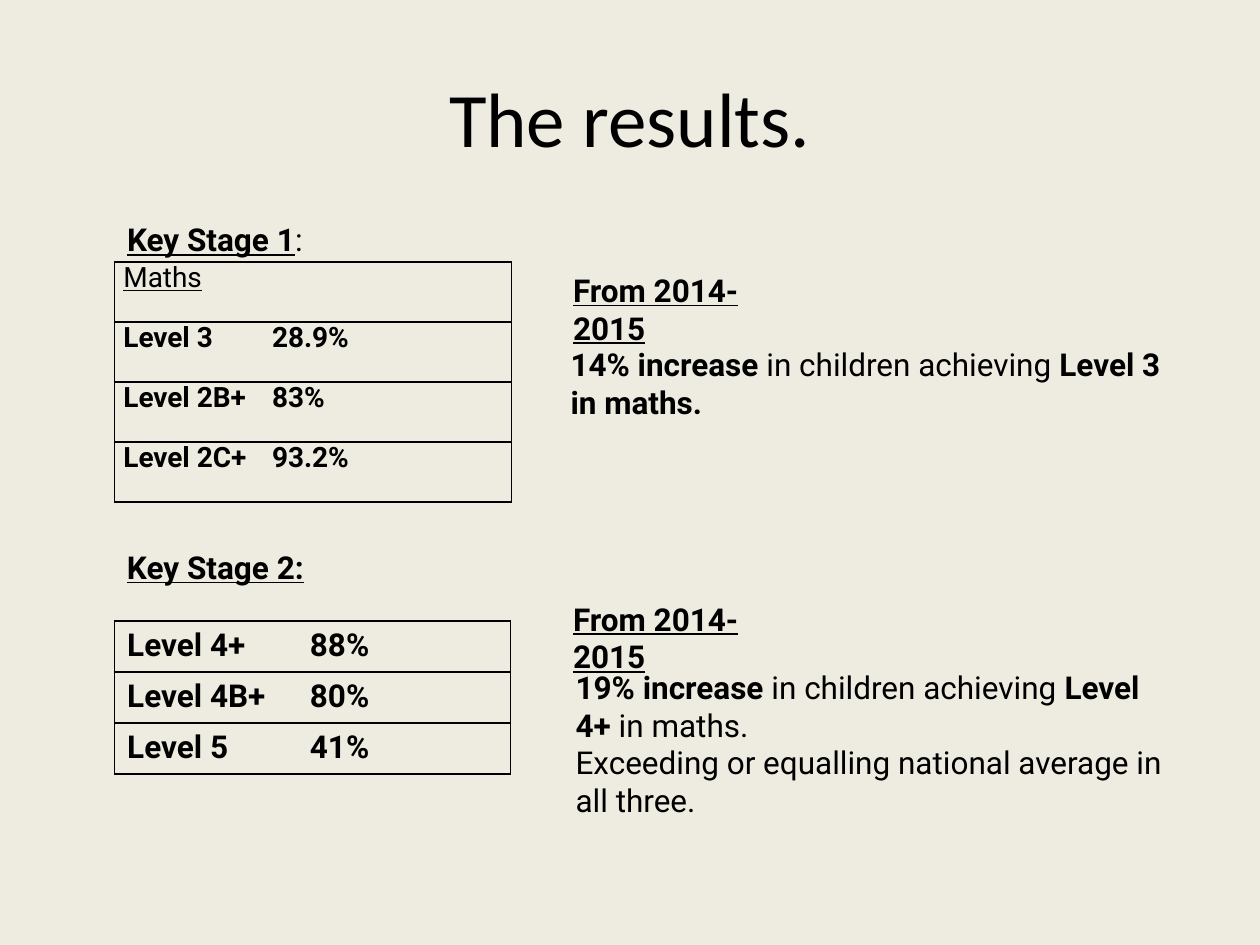
import pptx
import pptx.util
import pptx.dml.color
import pptx.enum.text
import pptx.oxml.ns
from lxml import etree

W, H = 10, 7.5
LEFT, RIGHT = 0.91, 4.45
COLORS = {"bg": "EEECE1", "ink": "000000"}
BODY = "Roboto"
HEAD = {"bold": True, "underline": True}
BOLD = {"bold": True}
PLAIN = {}

TITLE = "The results."
PERIOD = [[("From 2014-2015", HEAD)]]
TEXTS = [
    (LEFT, 1.7, 3.15, 0.4, [[("Key Stage 1", HEAD), (":", PLAIN)]]),
    (LEFT, 4.3, 2.44, 0.4, [[("Key Stage 2:", HEAD)]]),
    (RIGHT, 2.1, 2.03, 0.4, PERIOD),
    (RIGHT, 4.71, 2.03, 0.4, PERIOD),
    (4.43, 2.69, 5, 0.71, [[("14% increase", BOLD), (" in children achieving ", PLAIN),
                            ("Level 3 in maths.", BOLD)]]),
    (4.47, 5.25, 5, 1.31, [[("19% increase", BOLD), (" in children achieving ", PLAIN),
                            ("Level 4+ ", BOLD), ("in maths.", PLAIN)],
                           [("Exceeding or equalling national average in all three.", PLAIN)]]),
]
TABLES = [
    {"top": 2.08, "width": 3.15, "row": 0.476, "size": 16, "inset": (0.07, 0), "tab": 1.18,
     "rows": [("Maths", {"underline": True}), ("Level 3\t28.9%", BOLD),
              ("Level 2B+\t83%", BOLD), ("Level 2C+\t93.2%", BOLD)]},
    {"top": 4.93, "width": 3.14, "row": 0.404, "size": 18, "inset": (0.1, 0.05), "tab": 1.45,
     "rows": [("Level 4+\t88%", BOLD), ("Level 4B+\t80%", BOLD), ("Level 5\t41%", BOLD)]},
]


def rgb(name):
    return pptx.dml.color.RGBColor.from_string(COLORS[name])


def box(*lengths):
    return [pptx.util.Inches(v) for v in lengths]


def add_run(p, text, size=18, font=BODY, bold=False, underline=False):
    r = p.add_run()
    r.text = text
    f = r.font
    f.size, f.name, f.bold, f.underline = pptx.util.Pt(size), font, bold, underline
    f.color.rgb = rgb("ink")


def add_text(s, x, y, w, h, paragraphs):
    tf = s.shapes.add_textbox(*box(x, y, w, h)).text_frame
    tf.word_wrap = True
    for i, runs in enumerate(paragraphs):
        p = tf.add_paragraph() if i else tf.paragraphs[0]
        for text, style in runs:
            add_run(p, text, **style)


def set_borders(cell):
    tc_pr = cell._tc.get_or_add_tcPr()
    for i, side in enumerate("LRTB"):
        ln = etree.Element(pptx.oxml.ns.qn(f"a:ln{side}"), w=str(pptx.util.Pt(1)))
        fill = etree.SubElement(ln, pptx.oxml.ns.qn("a:solidFill"))
        etree.SubElement(fill, pptx.oxml.ns.qn("a:srgbClr"), val=COLORS["ink"])
        tc_pr.insert(i, ln)


def set_tab(p, position):
    tabs = etree.SubElement(p._p.get_or_add_pPr(), pptx.oxml.ns.qn("a:tabLst"))
    etree.SubElement(tabs, pptx.oxml.ns.qn("a:tab"),
                     pos=str(pptx.util.Inches(position)), algn="l")


def add_levels(s, t):
    n = len(t["rows"])
    table = s.shapes.add_table(n, 1, *box(LEFT, t["top"], t["width"], n * t["row"])).table
    table.first_row = table.horz_banding = False
    for i, (text, style) in enumerate(t["rows"]):
        cell = table.cell(i, 0)
        cell.margin_left = cell.margin_right = pptx.util.Inches(t["inset"][0])
        cell.margin_top = cell.margin_bottom = pptx.util.Inches(t["inset"][1])
        cell.fill.background()
        set_borders(cell)
        p = cell.text_frame.paragraphs[0]
        set_tab(p, t["tab"])
        add_run(p, text, size=t["size"], **style)


def main():
    prs = pptx.Presentation()
    prs.slide_width, prs.slide_height = box(W, H)
    s = prs.slides.add_slide(prs.slide_layouts[5])
    s.background.fill.solid()
    s.background.fill.fore_color.rgb = rgb("bg")

    title = s.shapes.title
    title.left, title.top, title.width, title.height = box(0.05 * W, 0.04 * H, 0.9 * W, 1.25)
    tf = title.text_frame
    tf.vertical_anchor = pptx.enum.text.MSO_ANCHOR.MIDDLE
    p = tf.paragraphs[0]
    p.alignment = pptx.enum.text.PP_ALIGN.CENTER
    add_run(p, TITLE, size=44, font="Calibri")

    for t in TABLES:
        add_levels(s, t)
    for text in TEXTS:
        add_text(s, *text)
    prs.save("out.pptx")


if __name__ == "__main__":
    main()
